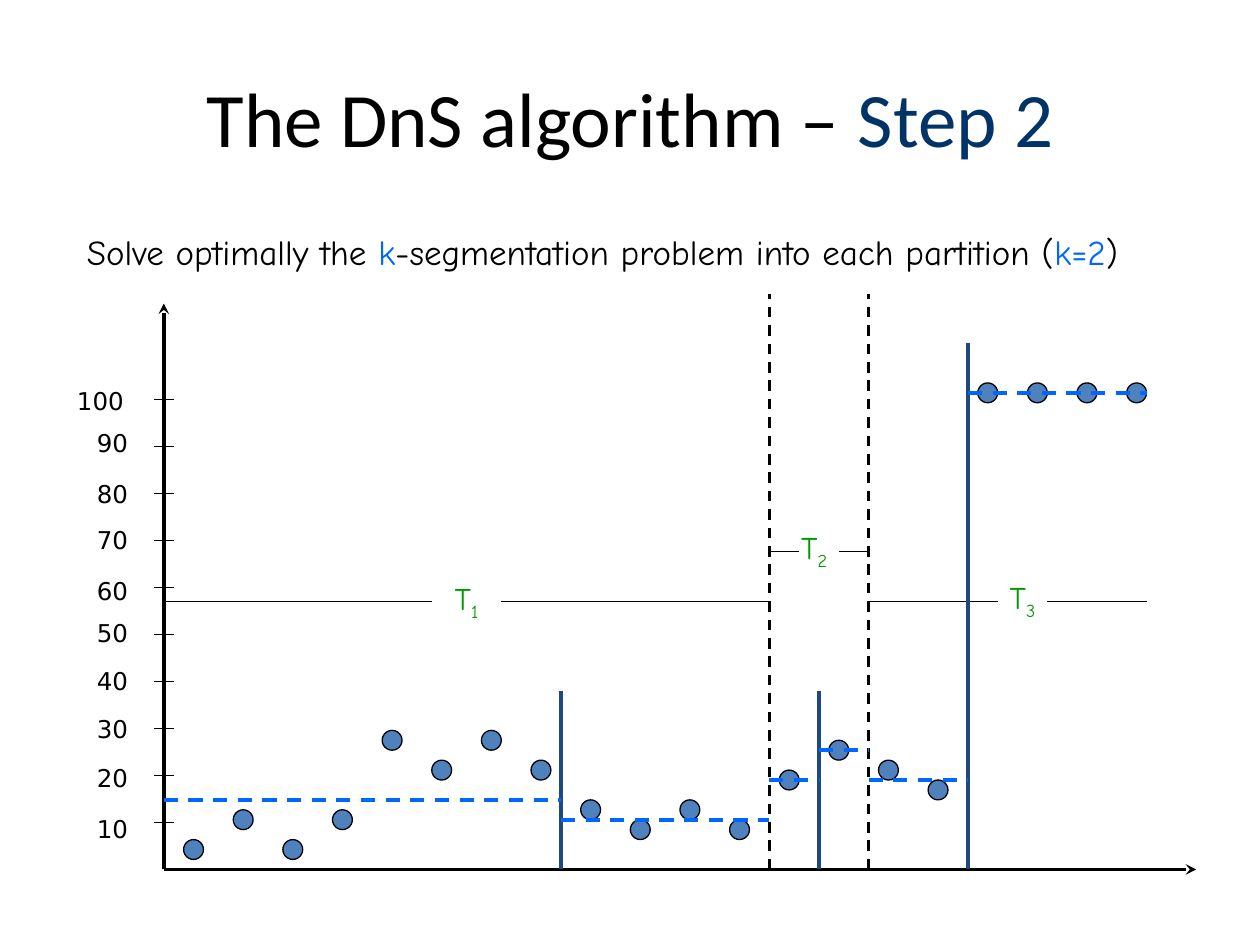
from lxml.etree import SubElement
from pptx import Presentation
from pptx.dml.color import RGBColor as Color
from pptx.enum.dml import MSO_LINE_DASH_STYLE as Dash
from pptx.enum.shapes import MSO_CONNECTOR_TYPE as Connector, MSO_SHAPE as Shape
from pptx.enum.text import MSO_ANCHOR as Anchor, PP_ALIGN as Align
from pptx.oxml.ns import qn
from pptx.util import Inches, Pt

COLORS = {"ink": "000000", "step": "003366", "accent": "0066FF",
          "dot": "4F81BD", "split": "1F497D", "part": "009900"}
FONTS = {
    "title": {"name": "Calibri", "size": Pt(44)},
    "lead": {"name": "Comic Neue", "size": Pt(20)},
    "part": {"name": "Comic Neue", "size": Pt(18)},
    "scale": {"name": "DejaVu Sans", "size": Pt(14)},
}
LINES = {
    "axis": ("ink", {"width": Pt(2)}),
    "thin": ("ink", {"width": Pt(0.75)}),
    "border": ("ink", {"width": Pt(1.5), "dash_style": Dash.DASH}),
    "split": ("split", {"width": Pt(2)}),
    "mean": ("accent", {"width": Pt(2), "dash_style": Dash.DASH}),
}
ORIGIN_X, ORIGIN_Y = 1.3, 6.9
COLUMN = 7.8 / 19.8
ROW = COLUMN / 5


def assign(target, values):
    """Set every attribute in values on target."""
    for name, value in values.items():
        setattr(target, name, value)


class PlotSlide:
    """Draws on one slide with a grid of columns and rows from the plot origin."""

    def __init__(self, deck):
        self.page = deck.slides.add_slide(deck.slide_layouts[5])
        self.shapes = self.page.shapes

    def x(self, column):
        return Inches(ORIGIN_X + column * COLUMN)

    def y(self, row):
        return Inches(ORIGIN_Y - row * ROW)

    def add_spans(self, para, spans, font, align):
        para.alignment = align
        for text, color, *baseline in spans:
            span = para.add_run()
            span.text = text
            assign(span.font, FONTS[font])
            span.font.color.rgb = Color.from_string(COLORS[color])
            if baseline:
                span._r.get_or_add_rPr().set("baseline", baseline[0])

    def title(self, spans):
        box = self.shapes.title
        assign(box, {"left": Inches(0.5), "top": Inches(0.3),
                     "width": Inches(9), "height": Inches(1.25)})
        box.text_frame.vertical_anchor = Anchor.MIDDLE
        self.add_spans(box.text_frame.paragraphs[0], spans, "title", Align.CENTER)

    def text(self, column, row, columns, rows, spans, font, align=Align.LEFT):
        box = self.shapes.add_textbox(self.x(column), self.y(row),
                                      Inches(columns * COLUMN), Inches(rows * ROW))
        box.text_frame.word_wrap = True
        self.add_spans(box.text_frame.paragraphs[0], spans, font, align)

    def line(self, start, end, style, arrow=False):
        line = self.shapes.add_connector(Connector.STRAIGHT, self.x(start[0]), self.y(start[1]),
                                         self.x(end[0]), self.y(end[1]))
        color, values = LINES[style]
        line.line.color.rgb = Color.from_string(COLORS[color])
        assign(line.line, values)
        properties = line._element.spPr
        if arrow:
            SubElement(properties.find(qn("a:ln")), qn("a:tailEnd"), type="stealth")
        SubElement(properties, qn("a:effectLst"))

    def dot(self, column, row):
        size = Inches(2 * ROW)
        dot = self.shapes.add_shape(Shape.OVAL, self.x(column - 0.2), self.y(row + 1), size, size)
        dot.shadow.inherit = False
        dot.fill.solid()
        dot.fill.fore_color.rgb = Color.from_string(COLORS["dot"])
        dot.line.color.rgb = Color.from_string(COLORS["ink"])
        dot.line.width = Pt(0.75)


def main():
    deck = Presentation()
    assign(deck, {"slide_width": Inches(10), "slide_height": Inches(7.5)})
    plot = PlotSlide(deck)
    plot.title([("The DnS algorithm – ", "ink"), ("Step 2", "step")])

    plot.line((0, 0), (20.8, 0), "axis", arrow=True)
    for step in range(1, 11):
        height = step * 4.73
        plot.line((-0.2, height), (0.2, height), "thin")
    plot.line((0, 0), (0, 57), "axis", arrow=True)

    label_rows = [6.2, 11.3, 16.3, 21.1, 26, 30.2, 35.3, 40, 45.1, 49.3]
    for step, row in enumerate(label_rows, 1):
        label = str(step * 10)
        columns = 0.4 + 0.4 * len(label)
        plot.text(-0.4 - columns, row, columns, 4.2, [(label, "ink")], "scale")

    values = [2, 5, 2, 5, 13, 10, 13, 10, 6, 4, 6, 4, 9, 12, 10, 8, 48, 48, 48, 48]
    for index, row in enumerate(values):
        plot.dot(index + 0.6, row)

    for column in (12.2, 14.2):
        plot.line((column, 0), (column, 58), "border")

    parts = [("1", 27, 27.4, 6.1, (0, 5.4), (6.8, 12.2)),
             ("2", 32, 32.5, 13.1, (12.2, 12.8), (13.6, 14.2)),
             ("3", 27, 27.5, 17.3, (14.2, 16.8), (17.8, 19.8))]
    for number, row, middle, center, *gaps in parts:
        for left, right in gaps:
            plot.line((left, row), (right, row), "thin")
        plot.text(center - 0.7, middle + 2.5, 1.4, 5,
                  [("T", "part"), (number, "part", "-25000")], "part", Align.CENTER)

    plot.text(-1.8, 65, 23.4, 5.5,
              [("Solve optimally the ", "ink"), ("k", "accent"),
               ("-segmentation problem into each partition (", "ink"),
               ("k=2", "accent"), (")", "ink")], "lead")

    for column, row in [(8, 18), (13.2, 18), (16.2, 53)]:
        plot.line((column, 0), (column, row), "split")
    for left, right, row in [(0, 8, 7), (8, 12.2, 5), (12.2, 13.2, 9),
                             (13.2, 14.2, 12), (14.2, 16.2, 9), (16.2, 19.8, 48)]:
        plot.line((left, row), (right, row), "mean")

    deck.save("out.pptx")


if __name__ == "__main__":
    main()
